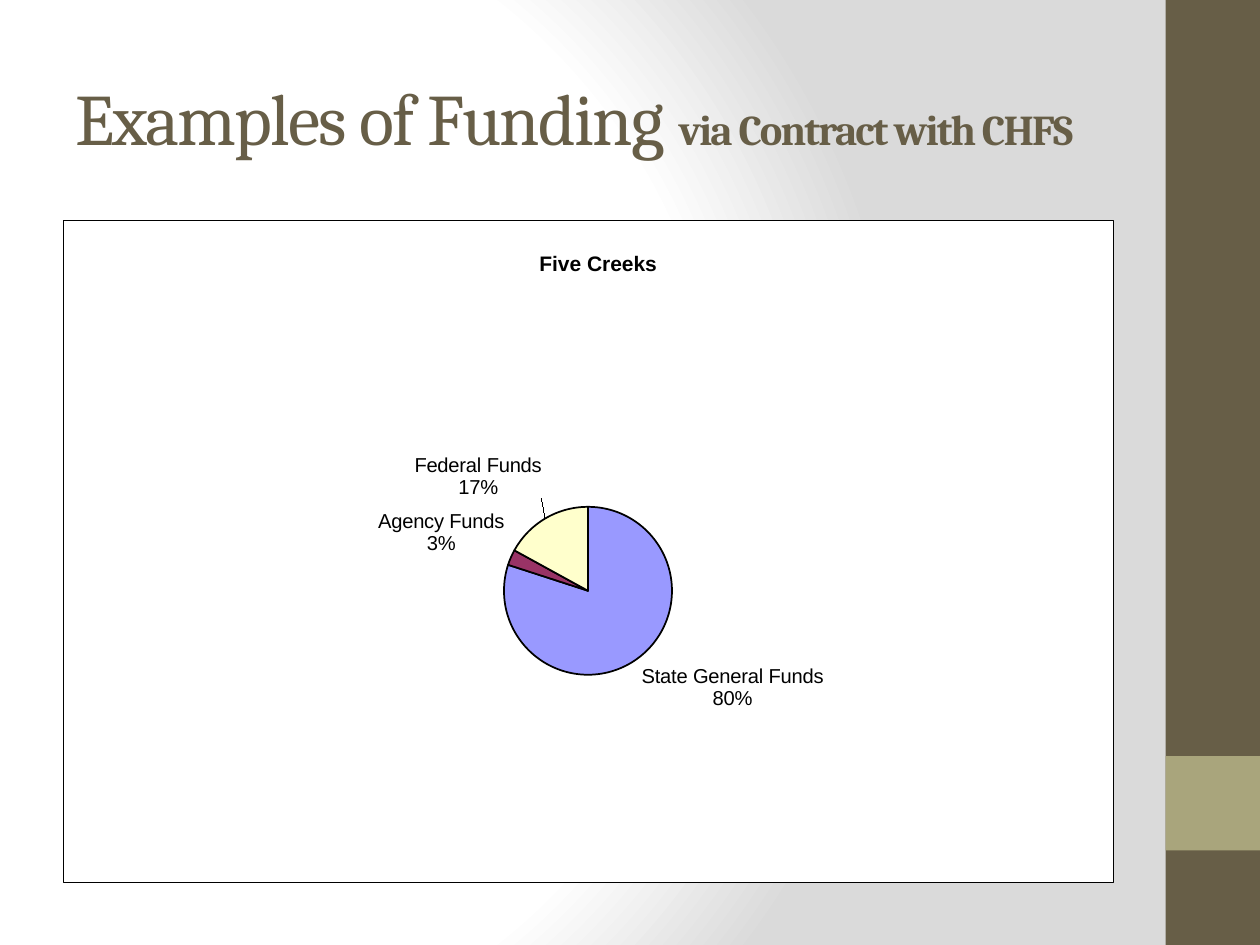
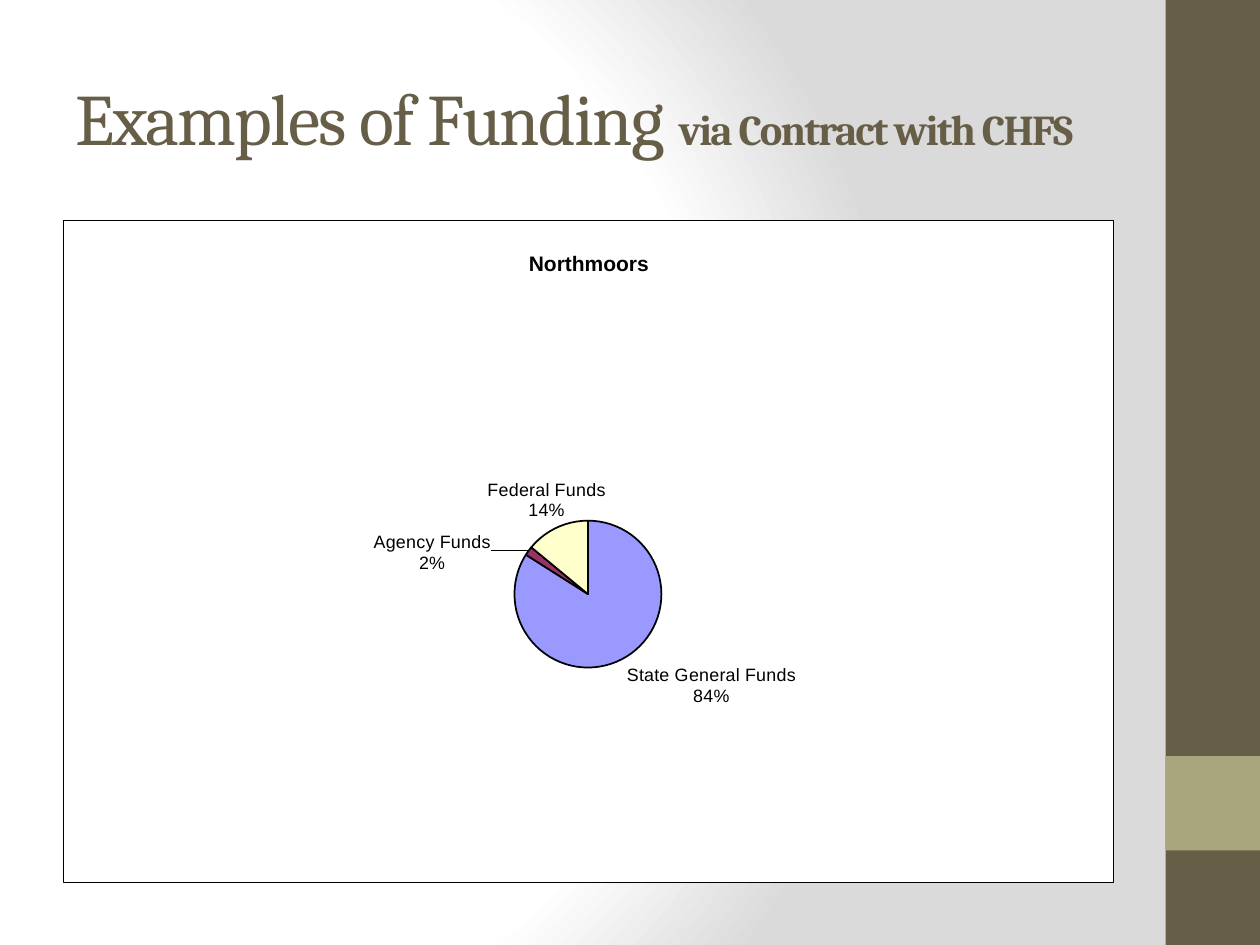
"""Build two slides with funding pie charts."""
from pptx import Presentation
from pptx.chart.data import CategoryChartData
from pptx.dml.color import RGBColor
from pptx.enum.chart import XL_CHART_TYPE as ChartType, XL_LABEL_POSITION as LabelPosition
from pptx.enum.shapes import MSO_SHAPE as Shape
from pptx.enum.text import MSO_ANCHOR as Anchor, MSO_AUTO_SIZE as AutoSize, PP_ALIGN as Align
from pptx.oxml import parse_xml
from pptx.oxml.ns import nsdecls, qn
from pptx.util import Pt

BROWN = RGBColor(0x67, 0x5E, 0x47)
OLIVE = RGBColor(0xA9, 0xA5, 0x7C)
WHITE = RGBColor(0xFF, 0xFF, 0xFF)
GREY = RGBColor(0xDA, 0xDA, 0xDA)
BLACK = RGBColor(0, 0, 0)
SLICE_COLORS = [RGBColor(0x99, 0x99, 0xFF), RGBColor(0x99, 0x33, 0x66),
                RGBColor(0xFF, 0xFF, 0xCC)]
FUNDS = ["State General Funds", "Agency Funds", "Federal Funds"]
TITLE_FONT, CHART_FONT = "Cambria", "Arial"
LEFT, CONTENT_WIDTH = 36, 600
BAND_LEFT, BAND_WIDTH = 666, 54
PAGE_WIDTH, PAGE_HEIGHT = 720, 540


def set_background(master):
    """Give the master a radial gradient from white to grey."""
    fill = master.background.fill
    fill.gradient()
    stops = "".join(f'<a:gs pos="{position}"><a:srgbClr val="{color}"/></a:gs>'
                    for position, color in [(0, WHITE), (75000, WHITE), (100000, GREY)])
    gradient = master._element.find(".//" + qn("a:gradFill"))
    gradient.getparent().replace(gradient, parse_xml(
        f'<a:gradFill {nsdecls("a")} rotWithShape="1"><a:gsLst>{stops}</a:gsLst>'
        '<a:path path="circle"><a:fillToRect l="20000" t="50000" r="100000" b="50000"/>'
        '</a:path></a:gradFill>'))


def add_band(slide, top, height, color):
    """Add a plain block to the right-hand side band."""
    band = slide.shapes.add_shape(Shape.RECTANGLE, Pt(BAND_LEFT), Pt(top),
                                  Pt(BAND_WIDTH), Pt(height))
    band.shadow.inherit = False
    band.fill.solid()
    band.fill.fore_color.rgb = color
    band.line.fill.background()


def set_title(slide, title_runs):
    """Place the title and fill it run by run."""
    title = slide.shapes.title
    title.left, title.top = Pt(LEFT), Pt(21.6)
    title.width, title.height = Pt(CONTENT_WIDTH), Pt(90)
    frame = title.text_frame
    frame.word_wrap = True
    frame.auto_size = AutoSize.NONE
    frame.vertical_anchor = Anchor.MIDDLE
    paragraph = frame.paragraphs[0]
    paragraph.alignment = Align.LEFT
    for text, size, bold in title_runs:
        run = paragraph.add_run()
        run.text = text
        run.font.name, run.font.size, run.font.bold = TITLE_FONT, Pt(size), bold
        run.font.color.rgb = BROWN
        run._r.get_or_add_rPr().set("spc", "-100")


def set_layout(element, index, target="", modes=("xMode", "yMode"), **fractions):
    """Insert a manual layout in a chart element at the given child index."""
    for layout in element.findall(qn("c:layout")):
        element.remove(layout)
    parts = f'<c:layoutTarget val="{target}"/>' if target else ""
    parts += "".join(f'<c:{mode} val="edge"/>' for mode in modes)
    parts += "".join(f'<c:{name} val="{value}"/>' for name, value in fractions.items())
    element.insert(index, parse_xml(
        f'<c:layout {nsdecls("c")}><c:manualLayout>{parts}</c:manualLayout></c:layout>'))


def set_font(font, size, bold=False):
    """Apply the chart typeface in black."""
    font.name, font.size, font.bold = CHART_FONT, Pt(size), bold
    font.color.rgb = BLACK


def frame_chart(chart):
    """Give the chart area a white fill and a thin square border."""
    chart_element = chart._chartSpace.find(qn("c:chart"))
    chart_element.addprevious(parse_xml(f'<c:roundedCorners {nsdecls("c")} val="0"/>'))
    chart_element.addnext(parse_xml(
        f'<c:spPr {nsdecls("c", "a")}><a:solidFill><a:srgbClr val="{WHITE}"/></a:solidFill>'
        f'<a:ln w="{Pt(0.25)}"><a:solidFill><a:srgbClr val="{BLACK}"/></a:solidFill></a:ln>'
        '</c:spPr>'))


def format_slices(series, size, offsets):
    """Colour the slices and set their labels, moved by the given offsets."""
    labels = series.data_labels
    labels.number_format, labels.number_format_is_linked = "0%", False
    labels.show_category_name = labels.show_percentage = True
    labels.show_value = False
    set_font(labels.font, size)
    for index, color in enumerate(SLICE_COLORS):
        point = series.points[index]
        point.format.fill.solid()
        point.format.fill.fore_color.rgb = color
        point.format.line.color.rgb = BLACK
        point.format.line.width = Pt(1)
        set_font(point.data_label.font, size)
        point.data_label.position = LabelPosition.OUTSIDE_END
    for label, offset in zip(series._element.findall(".//" + qn("c:dLbl")), offsets):
        for name, shown in [("showVal", 0), ("showCatName", 1), ("showPercent", 1)]:
            label.find(qn("c:" + name)).set("val", str(shown))
        label.append(parse_xml(f'<c:separator {nsdecls("c")}>\n</c:separator>'))
        if offset:
            set_layout(label, 1, modes=(), x=offset[0], y=offset[1])


def add_pie(slide, name, values, size, plot, title_left, offsets):
    """Add a framed pie chart of the funding shares."""
    data = CategoryChartData(number_format="0")
    data.categories = FUNDS
    data.add_series("Series 1", values)
    chart = slide.shapes.add_chart(ChartType.PIE, Pt(LEFT), Pt(126), Pt(CONTENT_WIDTH),
                                   Pt(378), data).chart
    chart.has_legend = False
    set_font(chart.font, size)
    frame_chart(chart)
    chart.has_title = True
    run = chart.chart_title.text_frame.paragraphs[0].add_run()
    run.text = name
    set_font(run.font, 12, True)
    set_layout(chart.chart_title._element, 1, x=title_left, y=0.04)
    left, top, width, height = plot
    set_layout(chart._chartSpace.find(".//" + qn("c:plotArea")), 0, "inner",
               x=left, y=top, w=width, h=height)
    chart.plots[0].vary_by_categories = True
    format_slices(chart.plots[0].series[0], size, offsets)


def add_funding_slide(presentation, **pie):
    """Add one slide with the shared title, bands and a pie chart."""
    slide = presentation.slides.add_slide(presentation.slide_layouts[5])
    add_band(slide, 0, PAGE_HEIGHT, BROWN)
    add_band(slide, 432, BAND_WIDTH, OLIVE)
    set_title(slide, [("Examples of Funding ", 41.4, False),
                      ("via Contract with CHFS", 24.3, True)])
    add_pie(slide, **pie)


def main():
    """Build and save the presentation."""
    presentation = Presentation()
    presentation.slide_width, presentation.slide_height = Pt(PAGE_WIDTH), Pt(PAGE_HEIGHT)
    set_background(presentation.slide_master)
    add_funding_slide(presentation, name="Five Creeks", values=(80, 3, 17), size=11.5,
                      plot=(0.42, 0.36, 0.16, 0.4), title_left=0.45,
                      offsets=[None, None, (0, -0.02)])
    add_funding_slide(presentation, name="Northmoors", values=(84, 2, 14), size=10.2,
                      plot=(0.43, 0.38, 0.14, 0.37), title_left=0.44,
                      offsets=[None, (-0.03, 0.04), (0.05, 0)])
    presentation.save("out.pptx")


if __name__ == "__main__":
    main()
